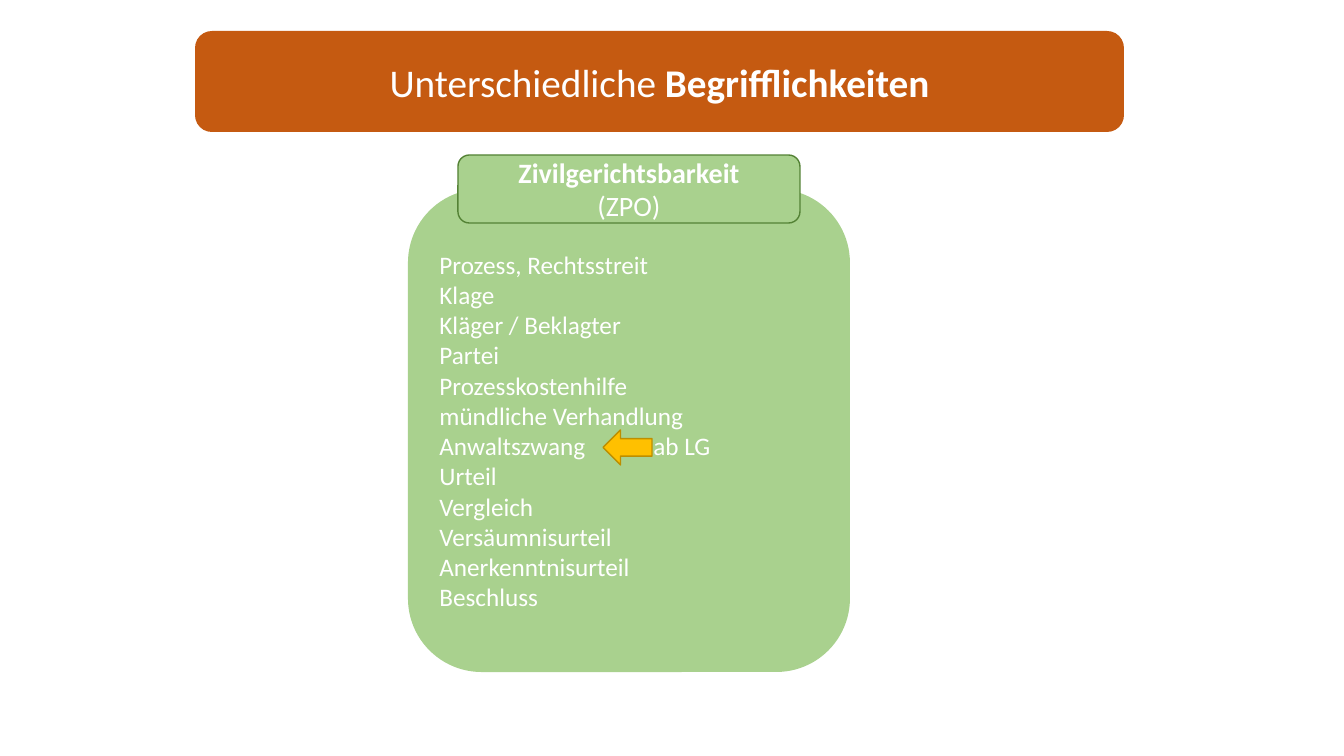
import pptx
import pptx.dml.color
import pptx.enum.shapes
import pptx.enum.text
import pptx.oxml.ns
import pptx.util
from lxml import etree

EMU_PER_PX = 914400 / 100.8
SHAPES = pptx.enum.shapes.MSO_SHAPE
ALIGN = pptx.enum.text.PP_ALIGN


def px(length):
    return pptx.util.Emu(round(length * EMU_PER_PX))


def colour(hex_code):
    return pptx.dml.color.RGBColor.from_string(hex_code)


class SlideBuilder:
    font = "Calibri"
    text_colour = "FFFFFF"
    orange = "C55A11"
    green = "A9D18E"
    dark_green = "548235"
    yellow = "FFC000"
    dark_yellow = "BD8E00"

    def __init__(self, slide):
        self.slide = slide

    def shape(self, kind, box, fill, line=None):
        shape = self.slide.shapes.add_shape(kind, *map(px, box))
        shape.shadow.inherit = False
        shape.fill.solid()
        shape.fill.fore_color.rgb = colour(fill)
        if line:
            shape.line.color.rgb = colour(line)
            shape.line.width = pptx.util.Pt(1)
        else:
            shape.line.fill.background()
        return shape

    def panel(self, box, fill, paragraphs, size, align, line=None, tab=None):
        """Rounded box; each paragraph is a list of (text, bold) runs."""
        panel = self.shape(SHAPES.ROUNDED_RECTANGLE, box, fill, line)
        frame = panel.text_frame
        frame.word_wrap = True
        frame.vertical_anchor = pptx.enum.text.MSO_ANCHOR.MIDDLE
        for index, runs in enumerate(paragraphs):
            paragraph = frame.add_paragraph() if index else frame.paragraphs[0]
            paragraph.alignment = align
            if tab:
                self.tab_stop(paragraph, tab)
            for text, bold in runs:
                run = paragraph.add_run()
                run.text = text
                run.font.name = self.font
                run.font.size = pptx.util.Pt(size)
                run.font.bold = bold
                run.font.color.rgb = colour(self.text_colour)

    def tab_stop(self, paragraph, position):
        qn = pptx.oxml.ns.qn
        properties = paragraph._p.get_or_add_pPr()
        tabs = etree.SubElement(properties, qn("a:tabLst"))
        etree.SubElement(tabs, qn("a:tab"), pos=str(px(position)), algn="l")


TERMS = [
    "Prozess, Rechtsstreit",
    "Klage",
    "Kläger / Beklagter",
    "Partei",
    "Prozesskostenhilfe",
    "mündliche Verhandlung",
    "Anwaltszwang\tab LG",
    "Urteil",
    "Vergleich",
    "Versäumnisurteil",
    "Anerkenntnisurteil",
    "Beschluss",
]


def main():
    presentation = pptx.Presentation()
    presentation.slide_width = px(1344)
    presentation.slide_height = px(756)
    blank = presentation.slide_layouts[6]
    builder = SlideBuilder(presentation.slides.add_slide(blank))

    title = [[("Unterschiedliche ", False), ("Begrifflichkeiten", True)]]
    builder.panel((195, 31, 929, 101), builder.orange, title, 28, ALIGN.CENTER)

    terms = [[(term, False)] for term in TERMS]
    builder.panel((408, 189, 442, 483), builder.green, terms, 18, ALIGN.LEFT, tab=214)

    court = [[("Zivilgerichtsbarkeit", True)], [("(ZPO)", False)]]
    builder.panel((458, 155, 342, 68), builder.green, court, 20, ALIGN.CENTER,
                  line=builder.dark_green)

    builder.shape(SHAPES.LEFT_ARROW, (603, 430, 49, 35), builder.yellow, builder.dark_yellow)

    presentation.save("out.pptx")


if __name__ == "__main__":
    main()
